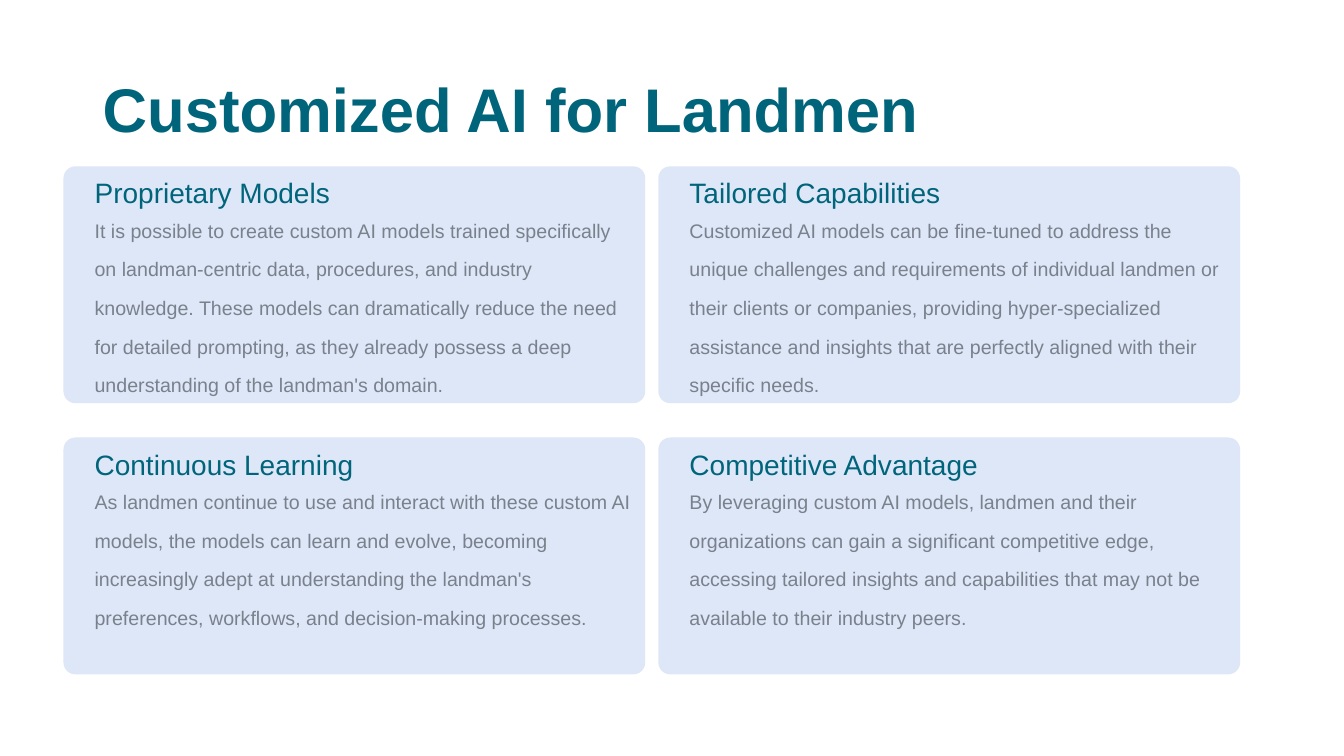
from dataclasses import dataclass

from pptx import Presentation
from pptx.dml.color import RGBColor
from pptx.enum.shapes import MSO_SHAPE as Preset
from pptx.enum.text import MSO_ANCHOR as Anchor
from pptx.util import Inches, Pt


@dataclass(frozen=True)
class Theme:
    font: str = "Arial"
    teal: str = "00647A"
    grey: str = "78818C"
    card_fill: str = "DEE7F7"
    title_size: float = 44
    heading_size: float = 20
    body_size: float = 14
    title_spacing: float = 0.9
    heading_spacing: float = 27.3
    body_spacing: float = 27.6


THEME = Theme()

BENEFITS = [
    ("Proprietary Models",
     "It is possible to create custom AI models trained specifically on "
     "landman-centric data, procedures, and industry knowledge. These models can "
     "dramatically reduce the need for detailed prompting, as they already possess "
     "a deep understanding of the landman's domain."),
    ("Tailored Capabilities",
     "Customized AI models can be fine-tuned to address the unique challenges and "
     "requirements of individual landmen or their clients or companies, providing "
     "hyper-specialized assistance and insights that are perfectly aligned with "
     "their specific needs."),
    ("Continuous Learning",
     "As landmen continue to use and interact with these custom AI models, the "
     "models can learn and evolve, becoming increasingly adept at understanding the "
     "landman's preferences, workflows, and decision-making processes."),
    ("Competitive Advantage",
     "By leveraging custom AI models, landmen and their organizations can gain a "
     "significant competitive edge, accessing tailored insights and capabilities "
     "that may not be available to their industry peers."),
]


def add_text(slide, box, text, size, color, spacing, bold=False, anchor=Anchor.TOP):
    frame = slide.shapes.add_textbox(*map(Inches, box)).text_frame
    frame.word_wrap = True
    frame.vertical_anchor = anchor
    paragraph = frame.paragraphs[0]
    paragraph.line_spacing = spacing
    run = paragraph.add_run()
    run.text = text
    run.font.name = THEME.font
    run.font.size = Pt(size)
    run.font.bold = bold
    run.font.color.rgb = RGBColor.from_string(color)


def add_title(slide, box):
    add_text(slide, box, "Customized AI for Landmen", THEME.title_size, THEME.teal,
             THEME.title_spacing, bold=True, anchor=Anchor.MIDDLE)


def add_benefit(slide, box, heading, body):
    left, top, width, height = box
    card = slide.shapes.add_shape(Preset.ROUNDED_RECTANGLE, *map(Inches, box))
    card.adjustments[0] = 0.05
    card.shadow.inherit = False
    card.fill.solid()
    card.fill.fore_color.rgb = RGBColor.from_string(THEME.card_fill)
    card.line.fill.background()

    indent = 0.21
    text_left, text_width = left + indent, width - indent
    add_text(slide, (text_left, top, text_width, 0.38), heading,
             THEME.heading_size, THEME.teal, Pt(THEME.heading_spacing))
    add_text(slide, (text_left, top + 0.32, text_width, 1.94), body,
             THEME.body_size, THEME.grey, Pt(THEME.body_spacing))


def add_benefit_grid(slide, box, gap_x=0.13, gap_y=0.34, columns=2):
    left, top, width, height = box
    rows = len(BENEFITS) // columns
    card_width = (width - gap_x * (columns - 1)) / columns
    card_height = (height - gap_y * (rows - 1)) / rows
    for index, (heading, body) in enumerate(BENEFITS):
        row, column = divmod(index, columns)
        card_box = (left + column * (card_width + gap_x),
                    top + row * (card_height + gap_y), card_width, card_height)
        add_benefit(slide, card_box, heading, body)


def main():
    deck = Presentation()
    deck.slide_width, deck.slide_height = Inches(13.33), Inches(7.5)
    slide = deck.slides.add_slide(deck.slide_layouts[6])
    add_title(slide, (0.92, 0.69, 11.5, 0.85))
    add_benefit_grid(slide, (0.63, 1.65, 11.67, 5.04))
    deck.save("out.pptx")


if __name__ == "__main__":
    main()
